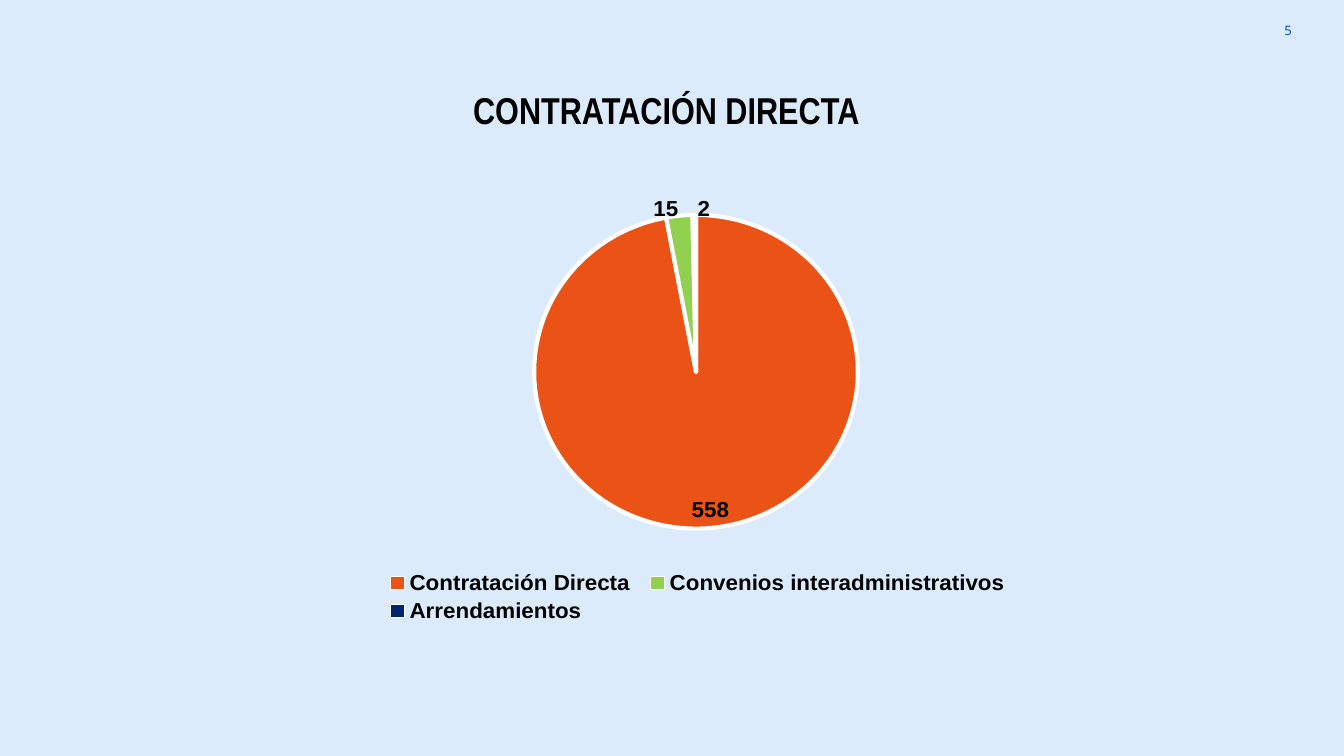
from dataclasses import dataclass

from pptx import Presentation
from pptx.chart.data import CategoryChartData as ChartData
from pptx.dml.color import RGBColor as Color
from pptx.enum.chart import XL_CHART_TYPE as Kind
from pptx.enum.chart import XL_LABEL_POSITION as Spot
from pptx.enum.chart import XL_LEGEND_POSITION as Side
from pptx.enum.text import MSO_ANCHOR as Anchor
from pptx.enum.text import MSO_AUTO_SIZE as Fit
from pptx.enum.text import PP_ALIGN as Align
from pptx.oxml import parse_xml
from pptx.oxml.ns import nsdecls
from pptx.util import Inches, Pt


@dataclass(frozen=True)
class Theme:
    back: str = "DCEBFB"
    ink: str = "000000"
    blue: str = "0054BC"
    edge: str = "FFFFFF"
    fills: tuple = ("EB5215", "92D050", "00246E")
    head: tuple = ("Arial Narrow", 20)
    body: tuple = ("Arial", 12)
    note: tuple = ("Noto Sans", 7)
    rim: float = 2.25


def layout(**parts):
    tags = "".join(f'<c:{tag} val="{val}"/>' for tag, val in parts.items())
    return parse_xml(
        f'<c:layout {nsdecls("c")}><c:manualLayout>{tags}</c:manualLayout></c:layout>'
    )


class Page:
    cell = 0.1

    def __init__(self, theme, wide, high):
        self.theme = theme
        self.deck = Presentation()
        self.deck.slide_width = Inches(wide)
        self.deck.slide_height = Inches(high)
        self.slide = self.deck.slides.add_slide(self.deck.slide_layouts[5])
        fill = self.slide.background.fill
        fill.solid()
        fill.fore_color.rgb = Color.from_string(theme.back)

    def grid(self, *cells):
        return [Inches(n * self.cell) for n in cells]

    def style(self, font, face, color, bold=True):
        font.name, font.size = face[0], Pt(face[1])
        font.bold = bold
        font.color.rgb = Color.from_string(color)

    def title(self, text, *cells):
        box = self.slide.shapes.title
        box.left, box.top, box.width, box.height = self.grid(*cells)
        frame = box.text_frame
        frame.text = text
        frame.word_wrap = False
        frame.auto_size = Fit.SHAPE_TO_FIT_TEXT
        frame.vertical_anchor = Anchor.TOP
        line = frame.paragraphs[0]
        line.alignment = Align.LEFT
        self.style(line.runs[0].font, self.theme.head, self.theme.ink)

    def number(self, text, *cells):
        frame = self.slide.shapes.add_textbox(*self.grid(*cells)).text_frame
        frame.text = text
        frame.word_wrap = True
        frame.vertical_anchor = Anchor.MIDDLE
        frame.margin_top = frame.margin_bottom = Inches(0.1)
        line = frame.paragraphs[0]
        line.alignment = Align.RIGHT
        self.style(line.runs[0].font, self.theme.note, self.theme.blue, False)

    def pie(self, name, values, *cells):
        theme = self.theme
        data = ChartData()
        data.categories = list(values)
        data.add_series(name, list(values.values()))
        chart = self.slide.shapes.add_chart(Kind.PIE, *self.grid(*cells), data).chart
        chart.has_title = False
        self.style(chart.font, theme.body, theme.ink)
        chart.has_legend = True
        chart.legend.position = Side.BOTTOM
        chart.legend.include_in_layout = False
        self.style(chart.legend.font, theme.body, theme.ink)

        plot = chart.plots[0]
        plot.vary_by_categories = True
        area = chart._chartSpace.chart.plotArea
        for old in area.findall(layout().tag):
            area.remove(old)
        area.insert(0, layout(layoutTarget="inner", xMode="edge", yMode="edge",
                              x=0.01, y=0.04, w=0.97, h=0.73))

        series = plot.series[0]
        labels = series.data_labels
        labels.show_value = True
        labels.position = Spot.BEST_FIT
        self.style(labels.font, theme.body, theme.ink)
        for spot, color in enumerate(theme.fills):
            form = series.points[spot].format
            form.fill.solid()
            form.fill.fore_color.rgb = Color.from_string(color)
            form.line.color.rgb = Color.from_string(theme.edge)
            form.line.width = Pt(theme.rim)

        last = series.points[len(values) - 1].data_label
        self.style(last.font, theme.body, theme.ink)
        last.position = Spot.BEST_FIT
        labels._element.dLbl_lst[0].insert(1, layout(x=0.01, y=0))

    def save(self):
        self.deck.save("out.pptx")


def main():
    wide = 10
    page = Page(Theme(), wide, wide * 9 / 16)
    page.number("5", 91.1, 0.1, 6, 4.3)
    page.title("CONTRATACIÓN DIRECTA", 34.2, 6, 31.6, 4.4)
    values = {
        "Contratación Directa ": 558,
        "Convenios interadministrativos ": 15,
        "Arrendamientos": 2,
    }
    page.pie("Series 1", values, 16, 13.7, 72.3, 33)
    page.save()


if __name__ == "__main__":
    main()
